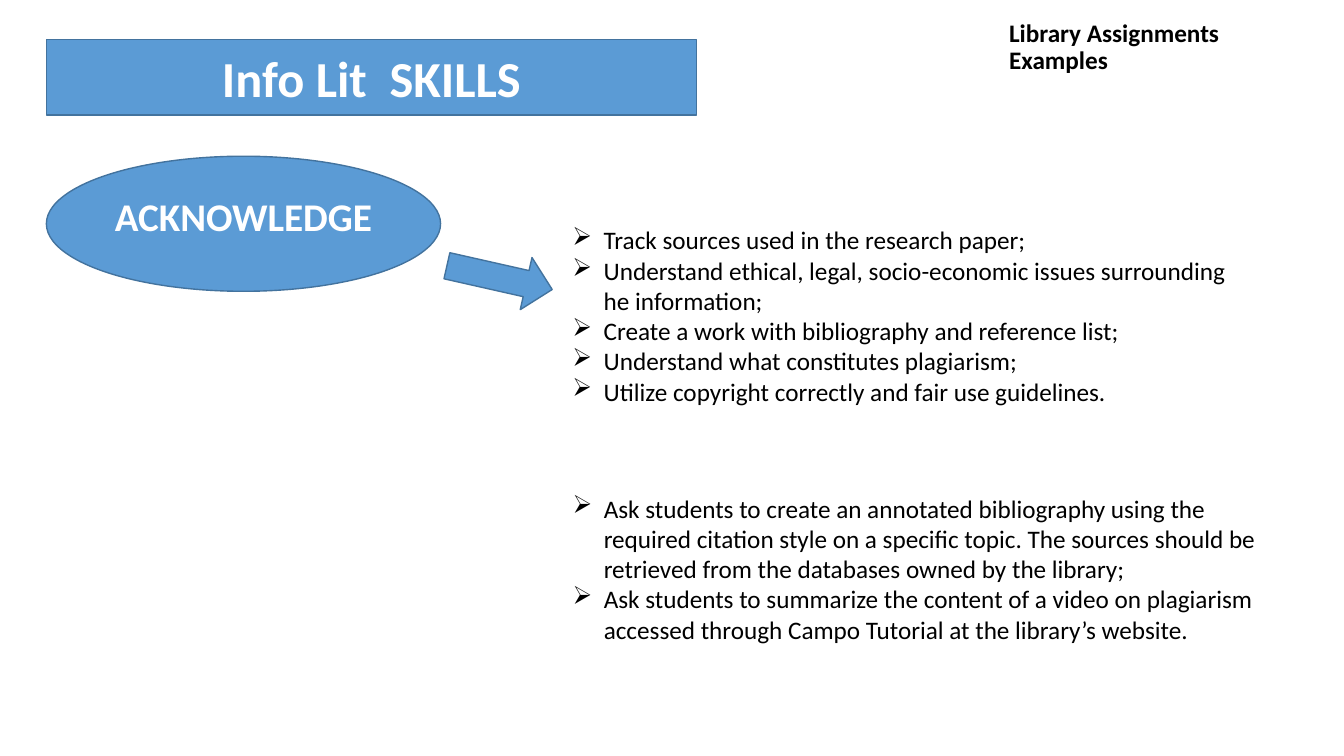
from lxml import etree
from pptx import Presentation
from pptx.dml.color import RGBColor
from pptx.enum.shapes import MSO_SHAPE
from pptx.enum.text import MSO_ANCHOR, PP_ALIGN
from pptx.oxml.ns import qn
from pptx.util import Pt

PX = 9144  # 100 px to the inch
FONT = "Calibri"
COLORS = {"blue": "5B9BD5", "edge": "43739E", "white": "FFFFFF", "black": "000000"}
RECTANGLE, OVAL, ARROW = MSO_SHAPE.RECTANGLE, MSO_SHAPE.OVAL, MSO_SHAPE.RIGHT_ARROW
MIDDLE, TOP = MSO_ANCHOR.MIDDLE, MSO_ANCHOR.TOP
CENTER, LEFT = PP_ALIGN.CENTER, PP_ALIGN.LEFT
BULLET, INDENT = "➢", 31

SKILLS = [
    "Track sources used in the research paper;",
    "Understand ethical, legal, socio-economic issues surrounding he information;",
    "Create a work with bibliography and reference list;",
    "Understand what constitutes plagiarism;",
    "Utilize copyright correctly and fair use guidelines.",
]
ASSIGNMENTS = [
    "Ask students to create an annotated bibliography using the required citation style "
    "on a specific topic. The sources should be retrieved from the databases owned by the library;",
    "Ask students to summarize the content of a video on plagiarism accessed through "
    "Campo Tutorial at the library’s website.",
]


def color(name):
    return RGBColor.from_string(COLORS[name])


def emu(lengths):
    return [length * PX for length in lengths]


def write(para, text, size, shade, bold=False, **layout):
    """Put text into a paragraph; layout holds paragraph attributes."""
    for name, value in layout.items():
        setattr(para, name, value)
    span = para.add_run()
    span.text = text
    font_format = {"name": FONT, "size": Pt(size), "bold": bold}
    for name, value in font_format.items():
        setattr(span.font, name, value)
    span.font.color.rgb = color(shade)


def add_blue_shape(page, kind, bounds, rotation=0):
    shape = page.shapes.add_shape(kind, *emu(bounds))
    shape.rotation = rotation
    shape.shadow.inherit = False
    shape.fill.solid()
    shape.fill.fore_color.rgb = color("blue")
    shape.line.color.rgb = color("edge")
    shape.line.width = Pt(1)
    return shape


def add_label(page, kind, bounds, text, size, **layout):
    frame = add_blue_shape(page, kind, bounds).text_frame
    frame.vertical_anchor = MIDDLE
    write(frame.paragraphs[0], text, size, "white", True, alignment=CENTER, **layout)


def add_text_box(page, bounds, anchor):
    frame = page.shapes.add_textbox(*emu(bounds)).text_frame
    frame.word_wrap = True
    frame.vertical_anchor = anchor
    return frame


def add_heading(page, bounds, text):
    frame = add_text_box(page, bounds, MIDDLE)
    write(frame.paragraphs[0], text, 18, "black", True, alignment=LEFT, line_spacing=0.9)


def add_bullets(page, bounds, items):
    frame = add_text_box(page, bounds, TOP)
    for index, item in enumerate(items):
        para = frame.add_paragraph() if index else frame.paragraphs[0]
        write(para, item, 18, "black", alignment=LEFT)
        properties = para._p.get_or_add_pPr()
        properties.set("marL", str(INDENT * PX))
        properties.set("indent", str(-INDENT * PX))
        etree.SubElement(properties, qn("a:buChar")).set("char", BULLET)


def main():
    deck = Presentation()
    deck.slide_width, deck.slide_height = emu((1333, 750))
    page = deck.slides.add_slide(deck.slide_layouts[6])
    add_heading(page, (991, 19, 319, 57), "Library Assignments Examples")
    add_label(page, RECTANGLE, (46, 39, 645, 75), "Info Lit  SKILLS", 36)
    add_label(page, OVAL, (46, 155, 391, 134), "ACKNOWLEDGE", 28, line_spacing=Pt(22))
    add_bullets(page, (558, 218, 693, 192), SKILLS)
    add_blue_shape(page, ARROW, (442, 249, 107, 53), rotation=12.7)
    add_bullets(page, (558, 484, 719, 162), ASSIGNMENTS)
    deck.save("out.pptx")


if __name__ == "__main__":
    main()
